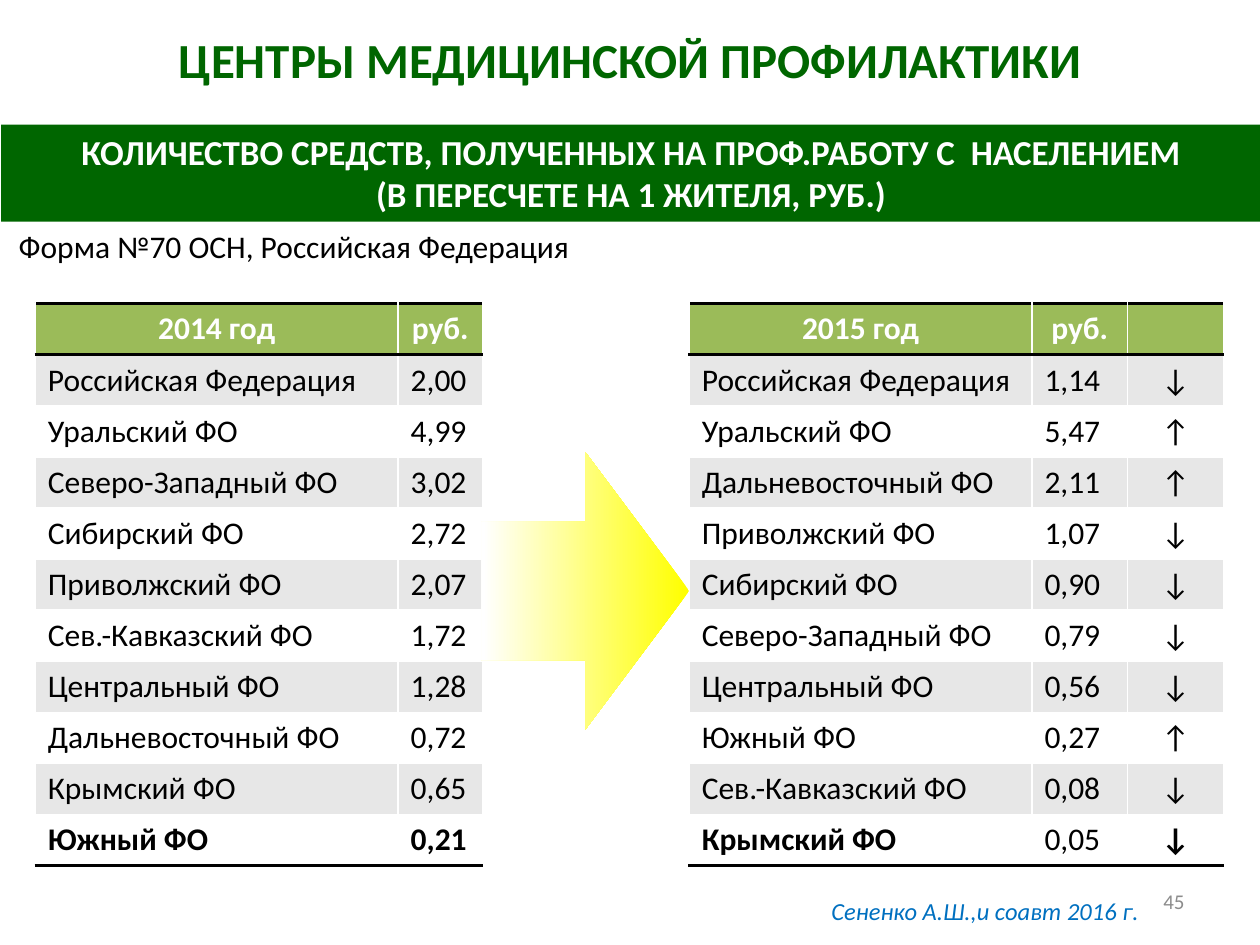
from lxml import etree
from pptx import Presentation
from pptx.dml.color import RGBColor
from pptx.enum.shapes import MSO_SHAPE
from pptx.enum.text import MSO_ANCHOR, PP_ALIGN
from pptx.oxml.ns import qn
from pptx.util import Inches, Pt

LEFT, CENTER, RIGHT = PP_ALIGN.LEFT, PP_ALIGN.CENTER, PP_ALIGN.RIGHT
TOP, MIDDLE = MSO_ANCHOR.TOP, MSO_ANCHOR.MIDDLE
GREEN, WHITE, BLACK, YELLOW = "006600", "FFFFFF", "000000", "FFFF00"
HEADER, BAND = "9BBB59", "E7E7E7"

TITLE = "ЦЕНТРЫ МЕДИЦИНСКОЙ ПРОФИЛАКТИКИ"
BANNER = ["КОЛИЧЕСТВО СРЕДСТВ, ПОЛУЧЕННЫХ НА ПРОФ.РАБОТУ С  НАСЕЛЕНИЕМ",
          "(В ПЕРЕСЧЕТЕ НА 1 ЖИТЕЛЯ, РУБ.)"]
# text, box, alignment, anchor, font
LABELS = [
    ("45", (7.17, 6.95, 2.33, 0.4), RIGHT, MIDDLE, dict(size=12, color="8C8C8C")),
    ("Форма №70 ОСН, Российская Федерация", (0.05, 1.75, 5.42, 0.4), LEFT, TOP,
     dict(size=18)),
    ("Сененко А.Ш.,и соавт 2016 г.", (6.5, 7.06, 2.72, 0.34), LEFT, TOP,
     dict(size=14, color="0070C0", italic=True)),
]
TABLES = [
    dict(left=0.28, widths=(2.88, 0.67), bold_last=(0, 1), rows=[
        ("2014 год", "руб."),
        ("Российская Федерация", "2,00"),
        ("Уральский ФО", "4,99"),
        ("Северо-Западный ФО", "3,02"),
        ("Сибирский ФО", "2,72"),
        ("Приволжский ФО", "2,07"),
        ("Сев.-Кавказский ФО", "1,72"),
        ("Центральный ФО", "1,28"),
        ("Дальневосточный ФО", "0,72"),
        ("Крымский ФО", "0,65"),
        ("Южный ФО", "0,21")]),
    dict(left=5.47, widths=(2.72, 0.76, 0.76), bold_last=(0, 2), rows=[
        ("2015 год", "руб.", ""),
        ("Российская Федерация", "1,14", "↓"),
        ("Уральский ФО", "5,47", "↑"),
        ("Дальневосточный ФО", "2,11", "↑"),
        ("Приволжский ФО", "1,07", "↓"),
        ("Сибирский ФО", "0,90", "↓"),
        ("Северо-Западный ФО", "0,79", "↓"),
        ("Центральный ФО", "0,56", "↓"),
        ("Южный ФО", "0,27", "↑"),
        ("Сев.-Кавказский ФО", "0,08", "↓"),
        ("Крымский ФО", "0,05", "↓")]),
]
TABLE_TOP, TABLE_HEIGHT = 2.41, 4.46


def rgb(color):
    return RGBColor.from_string(color)


def inches(box):
    return [Inches(v) for v in box]


def write(tf, lines, align, size, color=BLACK, **style):
    for i, line in enumerate(lines):
        p = tf.paragraphs[0] if i == 0 else tf.add_paragraph()
        p.alignment = align
        r = p.add_run()
        r.text = line
        r.font.color.rgb = rgb(color)
        for name, value in dict(name="Calibri", size=Pt(size), **style).items():
            setattr(r.font, name, value)


def add_shape(s, kind, box):
    sp = s.shapes.add_shape(kind, *inches(box))
    sp.shadow.inherit = False
    sp.line.fill.background()
    return sp


def set_border(cell, side):
    """Draw a 2 pt black line on side "T" or "B"; call before the cell's fill is set."""
    ln = etree.SubElement(cell._tc.get_or_add_tcPr(), qn(f"a:ln{side}"), w=str(Pt(2)))
    fill = etree.SubElement(ln, qn("a:solidFill"))
    etree.SubElement(fill, qn("a:srgbClr"), val=BLACK)


def add_table(s, left, widths, bold_last, rows):
    last = len(rows) - 1
    frame = s.shapes.add_table(len(rows), len(widths), *inches(
        (left, TABLE_TOP, sum(widths), TABLE_HEIGHT)))
    table = frame.table
    for column, width in zip(table.columns, widths):
        column.width = Inches(width)
    for i, row in enumerate(rows):
        for j, text in enumerate(row):
            cell = table.cell(i, j)
            for side in {0: "TB", last: "B"}.get(i, ""):
                set_border(cell, side)
            cell.fill.solid()
            cell.fill.fore_color.rgb = rgb(HEADER if i == 0 else BAND if i % 2 else WHITE)
            write(cell.text_frame, [text] if text else [],
                  CENTER if i == 0 or j == 2 else LEFT, 18,
                  WHITE if i == 0 else BLACK,
                  bold=i == 0 or (i == last and j in bold_last))


def main():
    prs = Presentation()
    prs.slide_width, prs.slide_height = inches((10, 7.5))
    s = prs.slides.add_slide(prs.slide_layouts[5])

    title = s.shapes.title
    title.left, title.top, title.width, title.height = inches((0, 0, 10, 0.93))
    title.fill.solid()
    title.fill.fore_color.rgb = rgb(WHITE)
    title.text_frame.vertical_anchor = MIDDLE
    write(title.text_frame, [TITLE], CENTER, 28, GREEN, bold=True)

    banner = add_shape(s, MSO_SHAPE.RECTANGLE, (0.01, 0.99, 10, 0.77))
    banner.fill.solid()
    banner.fill.fore_color.rgb = rgb(GREEN)
    banner.text_frame.word_wrap = True
    banner.text_frame.vertical_anchor = TOP
    write(banner.text_frame, BANNER, CENTER, 20, WHITE, bold=True)

    for table in TABLES:
        add_table(s, **table)

    arrow = add_shape(s, MSO_SHAPE.RIGHT_ARROW, (3.82, 3.59, 1.65, 2.2))
    arrow.fill.gradient()
    arrow.fill.gradient_angle = 180
    stops = [(0.01, YELLOW), (0.99, WHITE)]
    for stop, (position, color) in zip(arrow.fill.gradient_stops, stops):
        stop.position = position
        stop.color.rgb = rgb(color)

    for text, box, align, anchor, font in LABELS:
        tf = s.shapes.add_textbox(*inches(box)).text_frame
        tf.word_wrap = True
        tf.vertical_anchor = anchor
        write(tf, [text], align, **font)

    prs.save("out.pptx")


if __name__ == "__main__":
    main()
